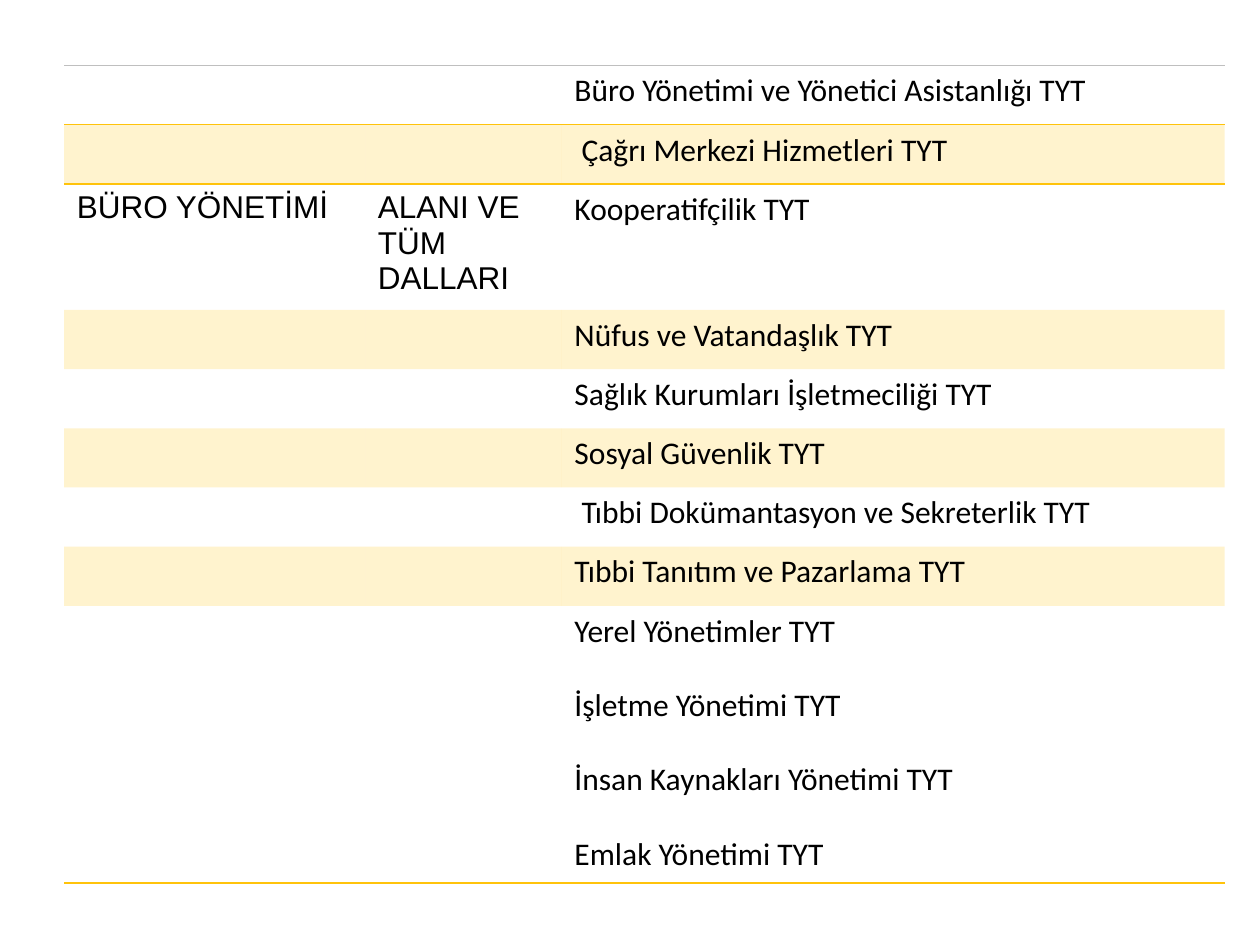
from lxml.etree import SubElement
from pptx import Presentation
from pptx.dml.color import RGBColor
from pptx.oxml.ns import qn
from pptx.util import Inches, Pt

GOLD = "FFC30B"
GREY = "BFBFBF"
BLACK = "000000"
PLAIN_STYLE = "{2D5ABB26-0587-4C30-8999-92F81FD0307C}"
COLUMN_WIDTHS = [2.39, 1.56, 5.26]
ROW_HEIGHT = 0.47
TALL_ROWS = {2: 1.0, 8: 2.2}
FIELD_ROW = 2
FIELD = ["BÜRO YÖNETİMİ", "ALANI VE TÜM DALLARI"]
PROGRAMMES = [
    ["Büro Yönetimi ve Yönetici Asistanlığı TYT"],
    [" Çağrı Merkezi Hizmetleri TYT"],
    ["Kooperatifçilik TYT"],
    ["Nüfus ve Vatandaşlık TYT"],
    ["Sağlık Kurumları İşletmeciliği TYT"],
    ["Sosyal Güvenlik TYT"],
    [" Tıbbi Dokümantasyon ve Sekreterlik TYT"],
    ["Tıbbi Tanıtım ve Pazarlama TYT"],
    [
        "Yerel Yönetimler TYT",
        "İşletme Yönetimi TYT",
        "İnsan Kaynakları Yönetimi TYT",
        "Emlak Yönetimi TYT",
    ],
]
BORDERS = {
    0: {"a:lnT": (GREY, 0.5), "a:lnB": (GOLD, 1)},
    1: {"a:lnT": (GOLD, 1)},
    8: {"a:lnB": (GOLD, 1)},
}


def color(value):
    return RGBColor.from_string(value)


def write_cell(cell, lines, font_name):
    text_frame = cell.text_frame
    for index, line in enumerate(lines):
        paragraph = text_frame.add_paragraph() if index else text_frame.paragraphs[0]
        if index:
            paragraph.space_before = Pt(20.5)
        run = paragraph.add_run()
        run.text = line
        run.font.name = font_name
        run.font.size = Pt(18)
        run.font.color.rgb = color(BLACK)


def add_border(cell, side, value, width):
    line = SubElement(cell._tc.get_or_add_tcPr(), qn(side), w=str(Pt(width)))
    fill = SubElement(line, qn("a:solidFill"))
    SubElement(fill, qn("a:srgbClr"), val=value)


def fill_cell(cell, banded):
    if not banded:
        cell.fill.background()
        return
    cell.fill.solid()
    cell.fill.fore_color.rgb = color(GOLD)
    tint = cell._tc.tcPr.find(qn("a:solidFill")).find(qn("a:srgbClr"))
    SubElement(tint, qn("a:alpha"), val="20000")


def add_programme_table(slide):
    heights = [TALL_ROWS.get(row, ROW_HEIGHT) for row in range(len(PROGRAMMES))]
    shape = slide.shapes.add_table(
        len(heights), len(COLUMN_WIDTHS), Inches(0.51), Inches(0.52),
        Inches(sum(COLUMN_WIDTHS)), Inches(sum(heights)),
    )
    table = shape.table
    table._tbl.tblPr.find(qn("a:tableStyleId")).text = PLAIN_STYLE
    for column, width in zip(table.columns, COLUMN_WIDTHS):
        column.width = Inches(width)
    for index, (row, height) in enumerate(zip(table.rows, heights)):
        row.height = Inches(height)
        for cell in row.cells:
            for side, (value, width) in BORDERS.get(index, {}).items():
                add_border(cell, side, value, width)
            fill_cell(cell, index % 2 == 1)
        write_cell(table.cell(index, 2), PROGRAMMES[index], "Calibri")
    for column, text in enumerate(FIELD):
        write_cell(table.cell(FIELD_ROW, column), [text], "Arial")


def main():
    presentation = Presentation()
    presentation.slide_width = Inches(10)
    presentation.slide_height = Inches(7.5)
    slide = presentation.slides.add_slide(presentation.slide_layouts[6])
    add_programme_table(slide)
    presentation.save("out.pptx")


if __name__ == "__main__":
    main()
